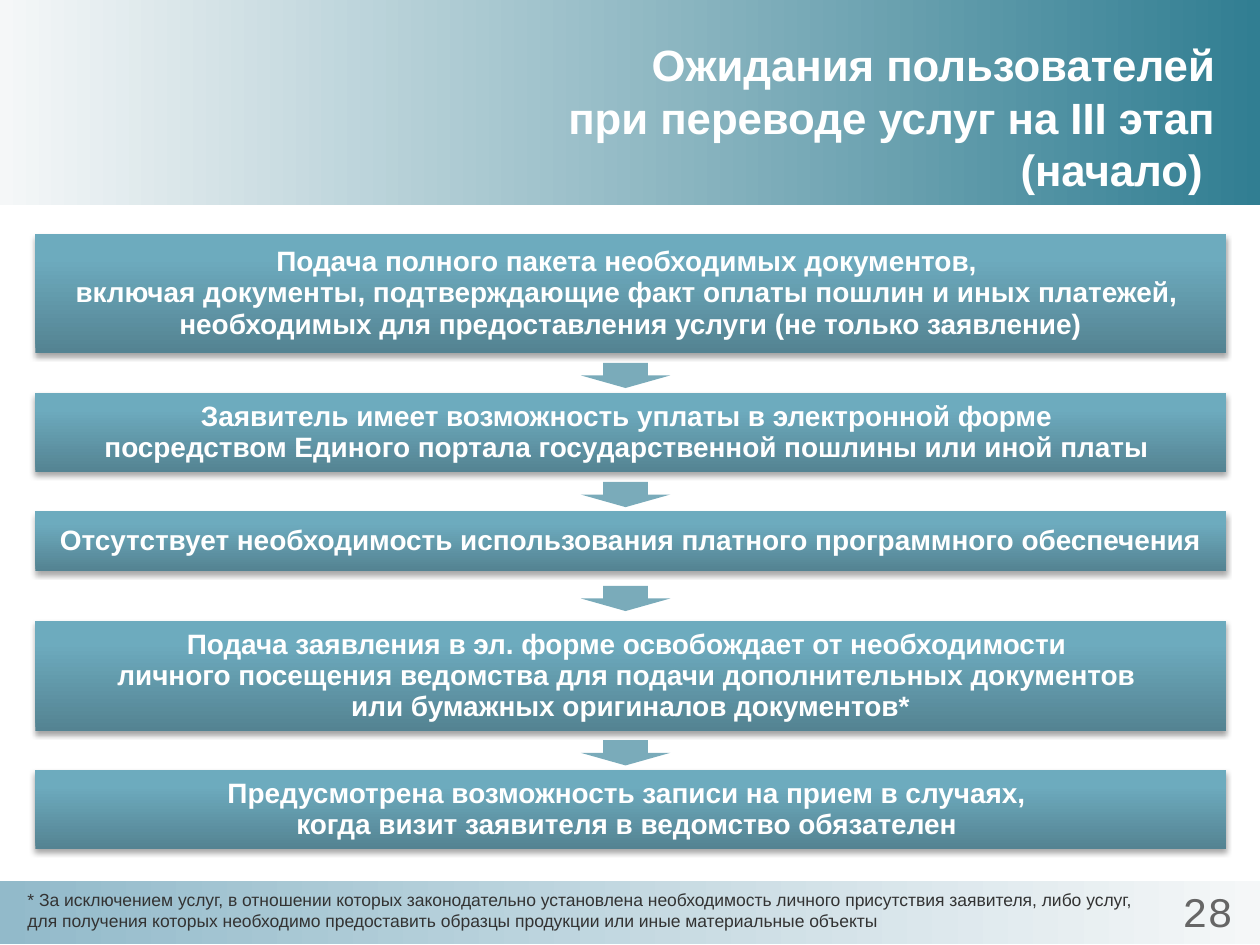
from lxml import etree
from pptx import Presentation, util as u
from pptx.dml.color import RGBColor
from pptx.enum import shapes, text
from pptx.oxml import parse_xml
from pptx.oxml.ns import nsdecls, qn

W, H = 10, 7.5
MARGIN = 0.28
BOX_WIDTH = 9.45
ARROW_LEFT, ARROW_WIDTH, ARROW_HEIGHT = 4.61, 0.71, 0.2
BOX_STOPS = [(0, "548392"), (80, "6DABBE"), (100, "6CACC0")]

TITLE = ["Ожидания пользователей", "при переводе услуг на III этап", "(начало) "]
FOOTNOTE = (
    "* За исключением услуг, в отношении которых законодательно установлена "
    "необходимость личного присутствия заявителя, либо услуг, для получения "
    "которых необходимо предоставить образцы продукции или иные материальные объекты"
)
STEPS = [
    (0.94, 0.32, [
        "Подача полного пакета необходимых документов, ",
        "включая документы, подтверждающие факт оплаты пошлин и иных платежей, ",
        "необходимых для предоставления услуги (не только заявление)",
    ]),
    (0.63, 0.31, [
        "Заявитель имеет возможность уплаты в электронной форме ",
        "посредством Единого портала государственной пошлины или иной платы ",
    ]),
    (0.47, 0.4, [
        "Отсутствует необходимость использования платного программного обеспечения",
    ]),
    (0.87, 0.31, [
        "Подача заявления в эл. форме освобождает от необходимости ",
        "личного посещения ведомства для подачи дополнительных документов ",
        "или бумажных оригиналов документов*",
    ]),
    (0.63, 0, [
        "Предусмотрена возможность записи на прием в случаях, ",
        "когда визит заявителя в ведомство обязателен ",
    ]),
]


def color(value):
    return RGBColor.from_string(value)


def add_shape(s, kind, box):
    sp = s.shapes.add_shape(kind, *map(u.Inches, box))
    sp.line.fill.background()
    sp.shadow.inherit = False
    return sp


def add_gradient_rect(s, box, stops, angle):
    sp = add_shape(s, shapes.MSO_SHAPE.RECTANGLE, box)
    marks = "".join(
        f'<a:gs pos="{pos * 1000}"><a:srgbClr val="{value}"/></a:gs>'
        for pos, value in stops
    )
    fill = parse_xml(
        f'<a:gradFill {nsdecls("a")} rotWithShape="1"><a:gsLst>{marks}</a:gsLst>'
        f'<a:lin ang="{angle * 60000}" scaled="0"/></a:gradFill>'
    )
    sp._element.spPr.find(qn("a:prstGeom")).addnext(fill)
    return sp


def add_shadow(sp):
    effects = sp._element.spPr.find(qn("a:effectLst"))
    shadow = etree.SubElement(
        effects, qn("a:outerShdw"), blurRad=str(u.Pt(3.1)), dist=str(u.Pt(1.8)),
        dir="5400000", rotWithShape="0",
    )
    black = etree.SubElement(shadow, qn("a:srgbClr"), val="000000")
    etree.SubElement(black, qn("a:alpha"), val="35000")


def add_run(p, content, size, value, bold=False, font="Arial"):
    r = p.add_run()
    r.text = content
    r.font.name, r.font.size, r.font.bold = font, u.Pt(size), bold
    r.font.color.rgb = color(value)


def add_text_box(s, box, align, anchor=text.MSO_ANCHOR.TOP):
    tf = s.shapes.add_textbox(*map(u.Inches, box)).text_frame
    tf.word_wrap = True
    tf.vertical_anchor = anchor
    p = tf.paragraphs[0]
    p.alignment = align
    return p


def add_title(s):
    p = add_text_box(s, (3.81, 0.3, 5.93, 1.25), text.PP_ALIGN.RIGHT,
                     text.MSO_ANCHOR.MIDDLE)
    for i, line in enumerate(TITLE):
        if i:
            p.add_line_break()
        add_run(p, line, 25, "FFFFFF", True)


def add_step(s, top, height, lines):
    sp = add_gradient_rect(s, (MARGIN, top, BOX_WIDTH, height), BOX_STOPS, 270)
    add_shadow(sp)
    tf = sp.text_frame
    tf.word_wrap = False
    tf.vertical_anchor = text.MSO_ANCHOR.MIDDLE
    for i, line in enumerate(lines):
        p = tf.add_paragraph() if i else tf.paragraphs[0]
        p.alignment = text.PP_ALIGN.CENTER
        p.line_spacing = 0.93
        add_run(p, line, 16, "FFFFFF", True)


def add_arrow(s, top):
    box = (ARROW_LEFT, top, ARROW_WIDTH, ARROW_HEIGHT)
    sp = add_shape(s, shapes.MSO_SHAPE.DOWN_ARROW, box)
    sp.fill.solid()
    sp.fill.fore_color.rgb = color("7AABBA")


def add_steps(s):
    top = 1.86
    for height, gap, lines in STEPS:
        add_step(s, top, height, lines)
        top += height + gap
        if gap:
            add_arrow(s, top - gap / 2 - 0.08)


def main():
    prs = Presentation()
    prs.slide_width, prs.slide_height = u.Inches(W), u.Inches(H)
    s = prs.slides.add_slide(prs.slide_layouts[6])
    add_gradient_rect(s, (0, 0, W, 1.63), [(0, "F5F7F8"), (100, "317E92")], 0)
    add_gradient_rect(s, (0, 6.99, W, 0.5), [(0, "F5F7F8"), (100, "92BACA")], 180)
    add_title(s)
    add_steps(s)
    p = add_text_box(s, (0.12, 7.01, 9.06, 0.44), text.PP_ALIGN.LEFT)
    add_run(p, FOOTNOTE, 10, "333333")
    p = add_text_box(s, (9.17, 6.98, 0.83, 0.52), text.PP_ALIGN.CENTER)
    add_run(p, "28", 24, "666666", font="Courier New")
    prs.save("out.pptx")


if __name__ == "__main__":
    main()
